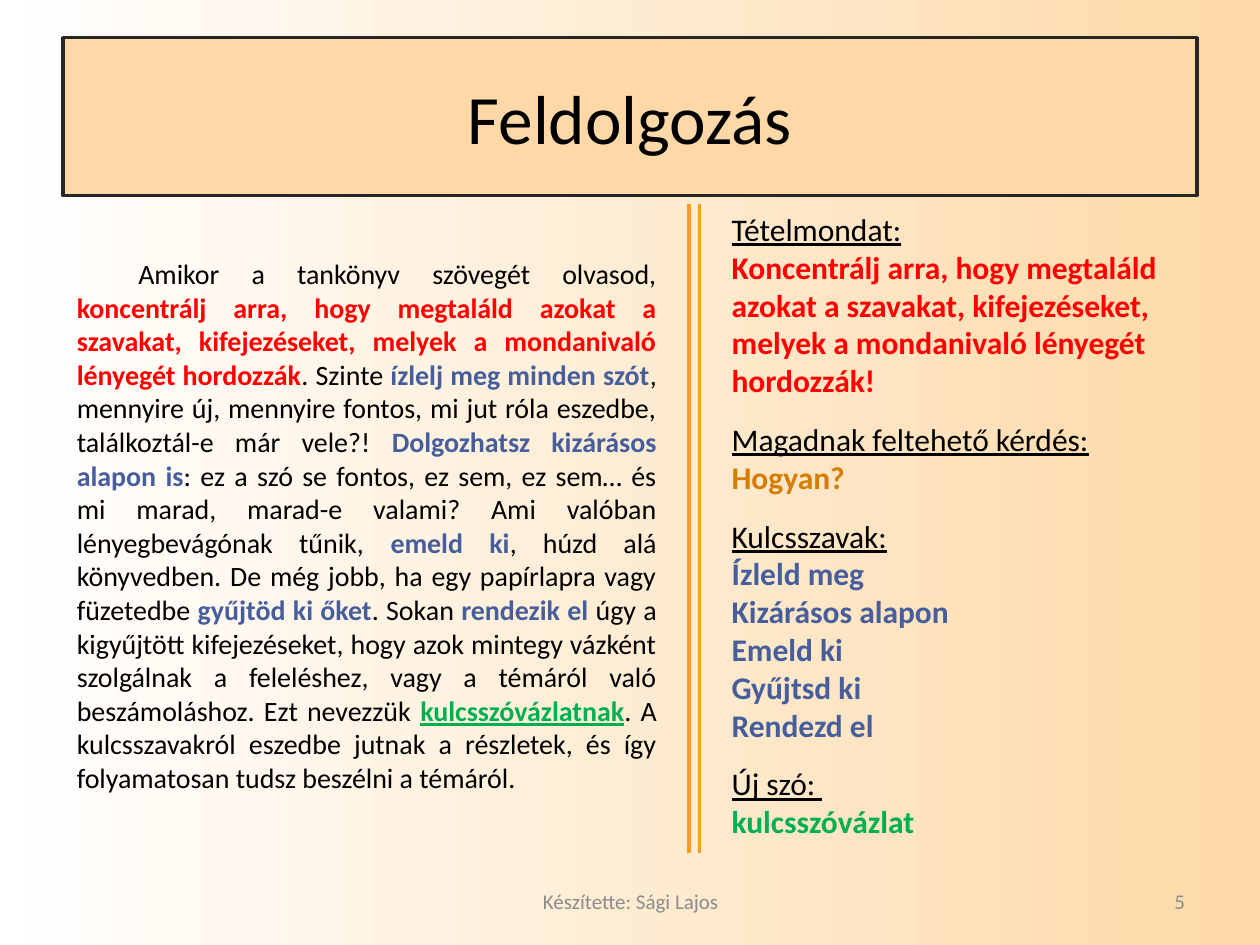
import pptx
import pptx.dml.color
import pptx.enum.shapes
import pptx.enum.text
import pptx.oxml
import pptx.oxml.ns
import pptx.util
from pptx.util import Cm

BLACK, RED, BLUE, GREEN = "000000", "FF0000", "465E9C", "00B050"
BROWN, GREY, ORANGE, PEACH = "D67C02", "8C8C8C", "FD9D1D", "FED9A7"
ALIGN = pptx.enum.text.PP_ALIGN

PASSAGE = [
    ("Amikor a tankönyv szövegét olvasod, ", BLACK),
    ("koncentrálj arra, hogy megtaláld azokat a szavakat, kifejezéseket, "
     "melyek a mondanivaló lényegét hordozzák", RED),
    (". Szinte ", BLACK),
    ("ízlelj meg minden szót", BLUE),
    (", mennyire új, mennyire fontos, mi jut róla eszedbe, "
     "találkoztál-e már vele?! ", BLACK),
    ("Dolgozhatsz kizárásos alapon is", BLUE),
    (": ez a szó se fontos, ez sem, ez sem… és mi marad, marad-e valami? "
     "Ami valóban lényegbevágónak tűnik, ", BLACK),
    ("emeld ki", BLUE),
    (", húzd alá könyvedben. De még jobb, ha egy papírlapra vagy füzetedbe ", BLACK),
    ("gyűjtöd ki őket", BLUE),
    (". Sokan ", BLACK),
    ("rendezik el ", BLUE),
    ("úgy a kigyűjtött kifejezéseket, hogy azok mintegy vázként szolgálnak "
     "a feleléshez, vagy a témáról való beszámoláshoz. Ezt nevezzük ", BLACK),
    ("kulcsszóvázlatnak", GREEN),
    (". A kulcsszavakról eszedbe jutnak a részletek, és így folyamatosan "
     "tudsz beszélni a témáról.", BLACK),
]

NOTES = [
    ("Tételmondat:", RED,
     ["Koncentrálj arra, hogy megtaláld azokat a szavakat, kifejezéseket, "
      "melyek a mondanivaló lényegét hordozzák!"]),
    ("Magadnak feltehető kérdés:", BROWN, ["Hogyan?"]),
    ("Kulcsszavak:", BLUE,
     ["Ízleld meg", "Kizárásos alapon", "Emeld ki", "Gyűjtsd ki", "Rendezd el"]),
    ("Új szó: ", GREEN, ["kulcsszóvázlat"]),
]


def color(value):
    return pptx.dml.color.RGBColor.from_string(value)


def add_run(paragraph, text, size, fill=BLACK, bold=False, underline=False):
    run = paragraph.add_run()
    run.text = text
    run.font.name = "Calibri"
    run.font.size = pptx.util.Pt(size)
    run.font.color.rgb = color(fill)
    run.font.bold = bold
    run.font.underline = underline


def set_background(slide):
    fill = slide.background.fill
    fill.gradient()
    fill.gradient_angle = 0
    for stop, position, value in zip(fill.gradient_stops, (0, 1), ("FFFFFF", PEACH)):
        stop.position = position
        stop.color.rgb = color(value)


def set_geometry(shape, preset, adjustment):
    """Give a placeholder its own preset outline."""
    geometry = pptx.oxml.parse_xml(
        f'<a:prstGeom {pptx.oxml.ns.nsdecls("a")} prst="{preset}"><a:avLst>'
        f'<a:gd name="adj" fmla="val {adjustment}"/></a:avLst></a:prstGeom>')
    shape.element.spPr.get_or_add_xfrm().addnext(geometry)


def format_title(title):
    title.left, title.top = Cm(1.27), Cm(0.76)
    title.width, title.height = Cm(22.86), Cm(3.18)
    set_geometry(title, "horizontalScroll", 18100)
    title.fill.solid()
    title.fill.fore_color.rgb = color(PEACH)
    title.line.color.rgb = color("262626")
    title.line.width = pptx.util.Pt(2)
    title.text_frame.vertical_anchor = pptx.enum.text.MSO_ANCHOR.MIDDLE
    paragraph = title.text_frame.paragraphs[0]
    paragraph.alignment = ALIGN.CENTER
    add_run(paragraph, "Feldolgozás", 39.6)


def add_text_frame(slide, left, top, width, height):
    box = slide.shapes.add_textbox(Cm(left), Cm(top), Cm(width), Cm(height))
    box.text_frame.word_wrap = True
    return box.text_frame


def add_footer(slide, text, left, width, alignment):
    frame = add_text_frame(slide, left, 17.65, width, 1.02)
    frame.vertical_anchor = pptx.enum.text.MSO_ANCHOR.MIDDLE
    frame.paragraphs[0].alignment = alignment
    add_run(frame.paragraphs[0], text, 12, fill=GREY)


def add_passage(slide):
    frame = add_text_frame(slide, 1.3, 5.05, 12.19, 11.2)
    frame.auto_size = pptx.enum.text.MSO_AUTO_SIZE.SHAPE_TO_FIT_TEXT
    paragraph = frame.paragraphs[0]
    paragraph.alignment = ALIGN.JUSTIFY
    paragraph._p.get_or_add_pPr().set("indent", str(Cm(1.24)))
    for text, fill in PASSAGE:
        add_run(paragraph, text, 16, fill=fill, bold=fill != BLACK,
                underline=fill == GREEN)


def add_notes(slide):
    frame = add_text_frame(slide, 14.5, 4.11, 9.8, 13.08)
    frame.auto_size = pptx.enum.text.MSO_AUTO_SIZE.SHAPE_TO_FIT_TEXT
    for index, (heading, fill, entries) in enumerate(NOTES):
        paragraph = frame.add_paragraph() if index else frame.paragraphs[0]
        if index:
            paragraph.space_before = pptx.util.Pt(12)
        add_run(paragraph, heading, 18, underline=True)
        for entry in entries:
            add_run(frame.add_paragraph(), entry, 18, fill=fill, bold=True)


def add_divider(slide, x):
    line = slide.shapes.add_connector(
        pptx.enum.shapes.MSO_CONNECTOR.STRAIGHT, Cm(x), Cm(4.11), Cm(x), Cm(17.2))
    line.line.color.rgb = color(ORANGE)
    line.line.width = pptx.util.Pt(2)
    line.element.spPr.append(pptx.oxml.parse_xml(
        f'<a:effectLst {pptx.oxml.ns.nsdecls("a")}/>'))


def main():
    presentation = pptx.Presentation()
    presentation.slide_width, presentation.slide_height = Cm(25.4), Cm(19.05)
    slide = presentation.slides.add_slide(presentation.slide_layouts[5])
    set_background(slide)
    format_title(slide.shapes.title)
    add_footer(slide, "Készítette: Sági Lajos", 8.69, 8.05, ALIGN.CENTER)
    add_footer(slide, "5", 18.21, 5.93, ALIGN.RIGHT)
    add_passage(slide)
    add_notes(slide)
    for x in (14.1, 13.89):
        add_divider(slide, x)
    presentation.save("out.pptx")


if __name__ == "__main__":
    main()
